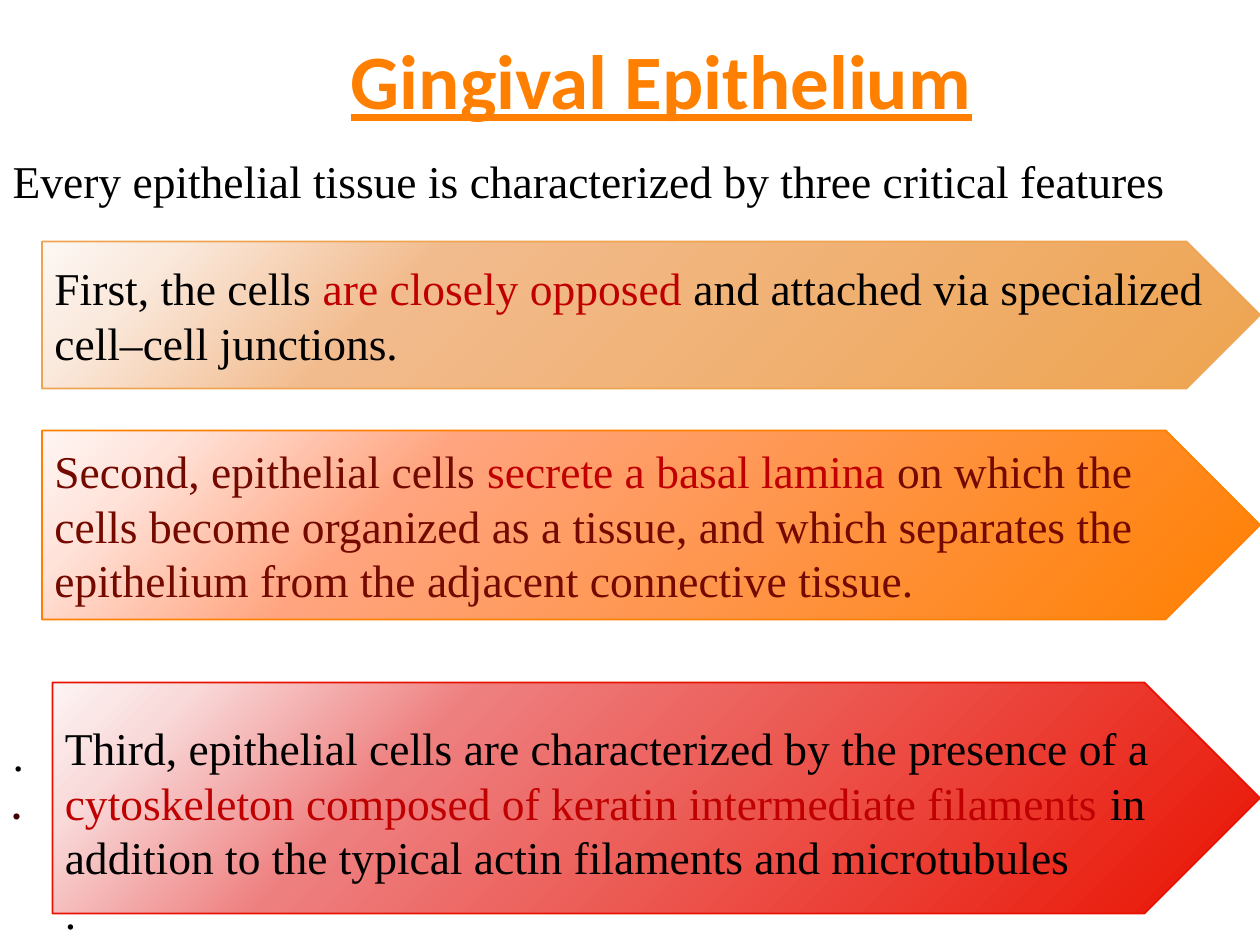
from lxml import etree
from pptx import Presentation
from pptx import util as u
from pptx.dml.color import RGBColor
from pptx.enum import shapes, text
from pptx.oxml import parse_xml
from pptx.oxml.ns import nsdecls, qn

COLORS = {"black": "000000", "accent": "C00000", "maroon": "740900",
          "orange": "FF8000", "bullet": "430000", "outline": "FAF9F9"}
SERIF = "Times New Roman"
CELL = u.Inches(10) // 120  # the slide is a grid of 120 columns by 90 rows


def add_run(paragraph, words, size=26, font=SERIF, color="black", bold=False, underline=False):
    run = paragraph.add_run()
    run.text = words
    run.font.size = u.Pt(size)
    run.font.name = font
    run.font.bold = bold
    run.font.underline = underline
    run.font.color.rgb = RGBColor.from_string(COLORS[color])
    return run


def place(shape, column, row, columns, rows):
    shape.left, shape.top = column * CELL, row * CELL
    shape.width, shape.height = columns * CELL, rows * CELL


presentation = Presentation()
presentation.slide_width, presentation.slide_height = 120 * CELL, 90 * CELL
slide = presentation.slides.add_slide(presentation.slide_layouts[1])

# Title
title = slide.shapes.title
place(title, 6, 2, 114, 11)
title.text_frame.auto_size = text.MSO_AUTO_SIZE.NONE
title.text_frame.vertical_anchor = text.MSO_ANCHOR.MIDDLE
heading = title.text_frame.paragraphs[0]
heading.alignment = text.PP_ALIGN.CENTER
run = add_run(heading, "Gingival Epithelium", size=44, font="Calibri",
              color="orange", bold=True, underline=True)
run.font._element.insert(0, parse_xml(
    f'<a:ln {nsdecls("a")} w="{u.Pt(1.5)}"><a:solidFill>'
    f'<a:srgbClr val="{COLORS["outline"]}"/></a:solidFill></a:ln>'))

# Introduction, followed by two lone full stops near the foot
body = slide.placeholders[1]
place(body, 0, 14, 118, 76)
body.text_frame.auto_size = text.MSO_AUTO_SIZE.NONE
introduction = [
    ("Every epithelial tissue is characterized by three critical features", 0, False),
    (".", 296, False),
    (".", 5, True),
]
for index, (words, space, bulleted) in enumerate(introduction):
    paragraph = body.text_frame.paragraphs[0] if index == 0 else body.text_frame.add_paragraph()
    paragraph.space_before = u.Pt(space)
    properties = paragraph._p.get_or_add_pPr()
    properties.set("marL", str(u.Inches(0.38)))
    properties.set("indent", str(u.Inches(-0.38)))
    if bulleted:
        color = etree.SubElement(properties, qn("a:buClr"))
        etree.SubElement(color, qn("a:srgbClr"), val=COLORS["bullet"])
        etree.SubElement(properties, qn("a:buSzPct"), val="50000")
        etree.SubElement(properties, qn("a:buChar"), char="•")
    else:
        etree.SubElement(properties, qn("a:buNone"))
    add_run(paragraph, words)

# Arrows: column, row, rows, text colour, gradient colours, paragraphs of (words, colour)
arrows = [
    (4, 23, 14, "black", ["FDF8F4", "FAE9DD", "F2BB8D", "EEA451"],
     [["First, the cells ", "are closely opposed ",
       "and attached via specialized cell–cell junctions."]]),
    (4, 41, 18, "maroon", ["FFF6F4", "FFE3DA", "FFA47F", "FF8000"],
     [["Second, epithelial cells ", "secrete a basal lamina ",
       "on which the cells become organized as a tissue, and which separates "
       "the epithelium from the adjacent connective tissue."]]),
    (5, 65, 22, "black", ["FDF4F4", "F9DADA", "EE7F7F", "E91201"],
     [["Third, epithelial cells are characterized by the presence of a ",
       "cytoskeleton composed of keratin intermediate filaments ",
       "in addition to the typical actin filaments and microtubules"], ["."]]),
]
for column, row, rows, color, gradient, paragraphs in arrows:
    arrow = slide.shapes.add_shape(shapes.MSO_SHAPE.PENTAGON, 0, 0, CELL, CELL)
    place(arrow, column, row, 120 - column, rows)
    arrow.shadow.inherit = False
    arrow.line.color.rgb = RGBColor.from_string(gradient[-1])
    arrow.line.width = u.Pt(1)
    stops = "".join(f'<a:gs pos="{share * 1000}"><a:srgbClr val="{stop}"/></a:gs>'
                    for share, stop in zip((0, 10, 30, 100), gradient))
    arrow._element.spPr.find(qn("a:prstGeom")).addnext(parse_xml(
        f'<a:gradFill {nsdecls("a")} rotWithShape="1"><a:gsLst>{stops}</a:gsLst>'
        '<a:path path="circle"><a:fillToRect r="100000" b="100000"/></a:path></a:gradFill>'))
    frame = arrow.text_frame
    frame.word_wrap = True
    frame.vertical_anchor = text.MSO_ANCHOR.MIDDLE
    if len(paragraphs) > 1:  # the lone full stop hangs below the arrow
        frame.vertical_anchor = text.MSO_ANCHOR.TOP
        frame.margin_top = u.Inches(0.3)
    for index, pieces in enumerate(paragraphs):
        paragraph = frame.paragraphs[0] if index == 0 else frame.add_paragraph()
        paragraph.alignment = text.PP_ALIGN.LEFT
        for position, words in enumerate(pieces):
            add_run(paragraph, words, color="accent" if position == 1 else color)

presentation.save("out.pptx")
